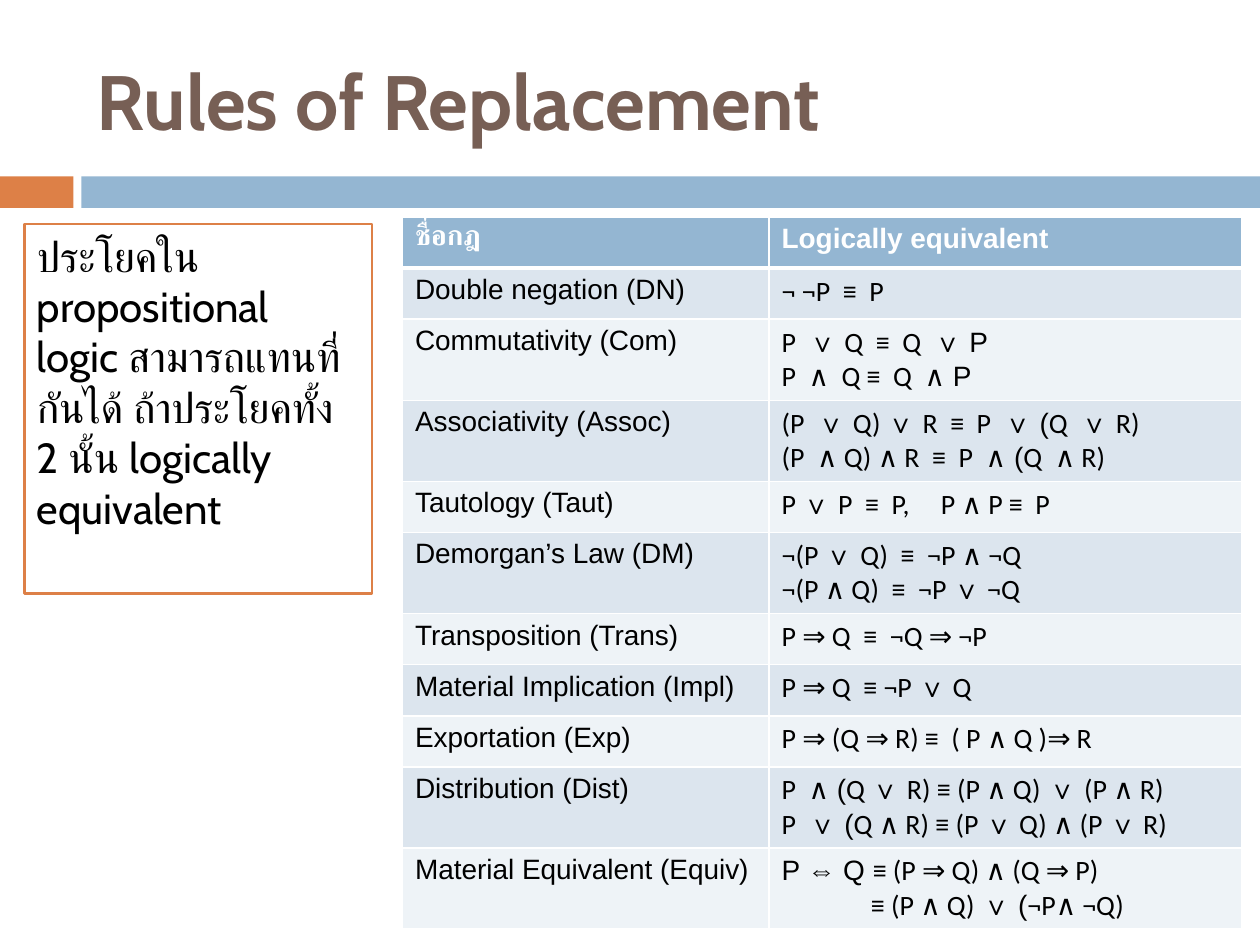
from lxml import etree
from pptx import Presentation
from pptx.dml.color import RGBColor
from pptx.enum.shapes import MSO_SHAPE
from pptx.enum.text import MSO_ANCHOR, PP_ALIGN
from pptx.oxml.ns import qn
from pptx.util import Pt

RECTANGLE = MSO_SHAPE.RECTANGLE
LEFT, TOP, MIDDLE = PP_ALIGN.LEFT, MSO_ANCHOR.TOP, MSO_ANCHOR.MIDDLE

ORANGE = RGBColor(0xDD, 0x80, 0x47)
BLUE = RGBColor(0x94, 0xB6, 0xD2)
BROWN = RGBColor(0x77, 0x5F, 0x55)
DARK_BAND = RGBColor(0xDC, 0xE5, 0xEE)
LIGHT_BAND = RGBColor(0xEE, 0xF3, 0xF7)
WHITE = RGBColor(0xFF, 0xFF, 0xFF)
BLACK = RGBColor(0, 0, 0)

FORMULA_INDENT = Pt(51)
FORMULA_TAB = Pt(91)

HEADINGS = ("ชื่อกฎ", "Logically equivalent")
# In a formula, text between bars is set in Arial and the rest in Calibri.
# A leading ">" indents the line.
RULES = [
    ("Double negation (DN)", ["¬ ¬P  ≡  P"]),
    ("Commutativity (Com)", ["P  |∨ |Q  ≡  Q  |∨ P|", "P  ∧  Q ≡  Q  ∧| P|"]),
    ("Associativity (Assoc)", ["(P  |∨ |Q) |∨ |R  ≡  P  |∨ (|Q  |∨ |R)",
                               "(P  ∧ Q) ∧ R  ≡  P  ∧| (|Q  ∧ R)"]),
    ("Tautology (Taut)", ["P |∨ |P  ≡  P,\tP ∧ P ≡  P"]),
    ("Demorgan’s Law (DM)", ["¬(P |∨ |Q)  ≡  ¬P ∧ ¬Q",
                             "¬(P ∧ Q)  ≡  ¬P |∨| ¬Q"]),
    ("Transposition (Trans)", ["P ⇒ Q  ≡  ¬Q ⇒ ¬P"]),
    ("Material Implication (Impl)", ["P ⇒ Q  ≡ ¬P |∨| Q"]),
    ("Exportation (Exp)", ["P ⇒ (Q ⇒ R) ≡  ( P ∧ Q )⇒ R"]),
    ("Distribution (Dist)", ["P  ∧| (|Q |∨ |R) ≡ (P ∧ Q)| ∨ |(P ∧ R)",
                             "P  |∨ (|Q ∧ R) ≡ (P |∨| Q) ∧ (P |∨| R)"]),
    ("Material Equivalent (Equiv)", ["|P ⇔ Q |≡ (P ⇒ Q) ∧ (Q ⇒ P)",
                                     ">≡ (P ∧ Q)| ∨ (|¬P∧ ¬Q)"]),
]


def add_text(para, text, font="Arial", size=16, color=BLACK, bold=False):
    span = para.add_run()
    span.text = text
    span.font.name = font
    span.font.size = Pt(size)
    span.font.color.rgb = color
    span.font.bold = bold


def add_formula(para, formula):
    """Write one formula line, switching font at each bar."""
    properties = para._p.get_or_add_pPr()
    if formula.startswith(">"):
        properties.set("marL", str(FORMULA_INDENT))
        properties.set("indent", "0")
    if "\t" in formula:
        tabs = etree.SubElement(properties, qn("a:tabLst"))
        etree.SubElement(tabs, qn("a:tab"), pos=str(FORMULA_TAB), algn="l")
    for index, piece in enumerate(formula.lstrip(">").split("|")):
        if piece:
            add_text(para, piece, font="Arial" if index % 2 else "Calibri")


def style_cell(cell, color, bottom=1):
    """Give a cell white borders, then its fill."""
    properties = cell._tc.get_or_add_tcPr()
    for side, width in (("L", 1), ("R", 1), ("T", 1), ("B", bottom)):
        line = etree.SubElement(properties, qn(f"a:ln{side}"), w=str(Pt(width)))
        fill = etree.SubElement(line, qn("a:solidFill"))
        etree.SubElement(fill, qn("a:srgbClr"), val=str(WHITE))
    cell.fill.solid()
    cell.fill.fore_color.rgb = color


class SlideBuilder:
    """Adds styled elements to one slide; lengths are in points."""

    def __init__(self, deck):
        self.page = deck.slides.add_slide(deck.slide_layouts[5])

    def title(self, text, left, top, width, height):
        box = self.page.shapes.title
        box.left, box.top = Pt(left), Pt(top)
        box.width, box.height = Pt(width), Pt(height)
        box.text_frame.vertical_anchor = MIDDLE
        para = box.text_frame.paragraphs[0]
        para.alignment = LEFT
        add_text(para, text, font="Cabin", size=44, color=BROWN, bold=True)

    def rectangle(self, left, top, width, height, fill, line=None):
        box = self.page.shapes.add_shape(
            RECTANGLE, Pt(left), Pt(top), Pt(width), Pt(height))
        box.shadow.inherit = False
        box.fill.solid()
        box.fill.fore_color.rgb = fill
        if line is None:
            box.line.fill.background()
        else:
            box.line.color.rgb = line
            box.line.width = Pt(1.5)
        return box

    def note(self, text, left, top, width, height):
        box = self.rectangle(left, top, width, height, WHITE, ORANGE)
        frame = box.text_frame
        frame.word_wrap = True
        frame.vertical_anchor = TOP
        para = frame.paragraphs[0]
        para.alignment = LEFT
        add_text(para, text, font="Cabin", size=24)

    def rule_table(self, left, top, column_widths, row_height):
        rows = len(RULES) + 1
        table = self.page.shapes.add_table(
            rows, len(column_widths), Pt(left), Pt(top),
            Pt(sum(column_widths)), Pt(rows * row_height)).table
        for column, width in zip(table.columns, column_widths):
            column.width = Pt(width)
        for row in table.rows:
            row.height = Pt(row_height)
        for column, heading in enumerate(HEADINGS):
            cell = table.cell(0, column)
            style_cell(cell, BLUE, bottom=3)
            add_text(cell.text_frame.paragraphs[0], heading, color=WHITE, bold=True)
        for row, (name, formulas) in enumerate(RULES, start=1):
            name_cell, formula_cell = table.cell(row, 0), table.cell(row, 1)
            for cell in (name_cell, formula_cell):
                style_cell(cell, DARK_BAND if row % 2 else LIGHT_BAND,)
            add_text(name_cell.text_frame.paragraphs[0], name)
            frame = formula_cell.text_frame
            for index, formula in enumerate(formulas):
                para = frame.add_paragraph() if index else frame.paragraphs[0]
                add_formula(para, formula)


def main():
    deck = Presentation()
    deck.slide_width, deck.slide_height = Pt(720), Pt(540)
    builder = SlideBuilder(deck)
    builder.rectangle(0, 100.8, 42, 18, ORANGE)
    builder.rectangle(46.5, 100.8, 673.5, 18, BLUE)
    builder.title("Rules of Replacement", 48, 18, 642, 78)
    builder.rule_table(230, 124, (209.5, 270), 29.2)
    builder.note("ประโยคใน propositional logic สามารถแทนที่กันได้ "
                 "ถ้าประโยคทั้ง 2 นั้น logically equivalent",
                 14, 128, 198.5, 211)
    deck.save("out.pptx")


if __name__ == "__main__":
    main()
